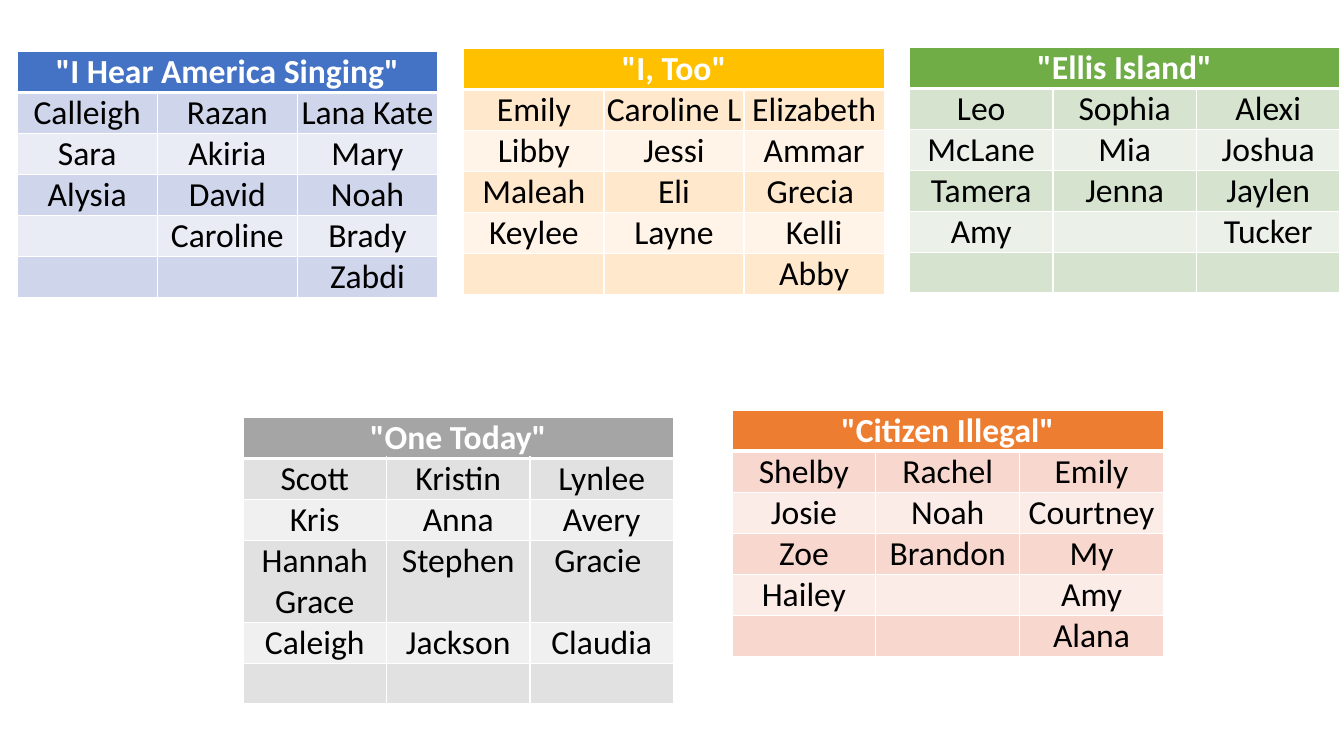
import pptx
import pptx.util
import pptx.dml.color
import pptx.enum.text
import pptx.oxml
import pptx.oxml.ns
from pptx.util import Inches

COLUMNS = 3
ROW_HEIGHT = 0.4
FONT = "Calibri"
COLORS = {
    "white": "FFFFFF", "black": "000000",
    # header, odd row, even row
    "blue": ("4472C4", "CFD5EA", "E9EBF5"),
    "gray": ("A5A5A5", "E1E1E1", "F0F0F0"),
    "orange": ("ED7D31", "F8D7CE", "FCECE8"),
    "green": ("70AD47", "D5E3CF", "EBF1E9"),
    "gold": ("FFC000", "FFE8CC", "FFF4E7"),
}

# title, theme, (left, top, width), rows of names
GROUPS = [
    ('"I Hear America Singing"', "blue", (0.17, 0.51, 4.17), [
        ("Calleigh", "Razan", "Lana Kate"),
        ("Sara", "Akiria", "Mary"),
        ("Alysia", "David", "Noah"),
        ("", "Caroline", "Brady"),
        ("", "", "Zabdi")]),
    ('"One Today"', "gray", (2.41, 4.14, 4.27), [
        ("Scott", "Kristin", "Lynlee"),
        ("Kris", "Anna", "Avery"),
        ("Hannah Grace", "Stephen", "Gracie "),
        ("Caleigh", "Jackson", "Claudia"),
        ("", "", "")]),
    ('"Citizen Illegal"', "orange", (7.26, 4.07, 4.28), [
        ("Shelby", "Rachel", "Emily"),
        ("Josie", "Noah", "Courtney"),
        ("Zoe", "Brandon", "My"),
        ("Hailey", "", "Amy"),
        ("", "", "Alana")]),
    ('"Ellis Island"', "green", (9.02, 0.47, 4.27), [
        ("Leo", "Sophia", "Alexi"),
        ("McLane", "Mia", "Joshua"),
        ("Tamera", "Jenna", "Jaylen"),
        ("Amy", "", "Tucker"),
        ("", "", "")]),
    ('"I, Too"', "gold", (4.6, 0.48, 4.17), [
        ("Emily", "Caroline L", "Elizabeth"),
        ("Libby", "Jessi", "Ammar"),
        ("Maleah", "Eli", "Grecia "),
        ("Keylee", "Layne", "Kelli"),
        ("", "", "Abby")]),
]


def rgb(value):
    return pptx.dml.color.RGBColor.from_string(value)


def set_borders(cell, top, bottom):
    """White borders; top and bottom widths in points."""
    tcPr = cell._tc.get_or_add_tcPr()
    for side, width in (("L", 1), ("R", 1), ("T", top), ("B", bottom)):
        tcPr.append(pptx.oxml.parse_xml(
            f'<a:ln{side} {pptx.oxml.ns.nsdecls("a")} w="{pptx.util.Pt(width)}">'
            f'<a:solidFill><a:srgbClr val="{COLORS["white"]}"/></a:solidFill>'
            f'</a:ln{side}>'))


def style_cell(cell, text, fill, color, bold):
    cell.margin_left = cell.margin_right = 0
    cell.margin_top = cell.margin_bottom = 0
    cell.fill.solid()
    cell.fill.fore_color.rgb = rgb(fill)
    if not text:
        return
    p = cell.text_frame.paragraphs[0]
    p.text = text
    p.alignment = pptx.enum.text.PP_ALIGN.CENTER
    font = p.runs[0].font
    font.name = FONT
    font.size = pptx.util.Pt(24)
    font.bold = bold
    font.color.rgb = rgb(color)


def add_group_table(s, title, theme, box, names):
    left, top, width = box
    rows = [(title, "", "")] + names
    table = s.shapes.add_table(
        len(rows), COLUMNS, Inches(left), Inches(top),
        Inches(width), Inches(ROW_HEIGHT * len(rows))).table
    for column in table.columns:
        column.width = Inches(width / COLUMNS)

    # Header spans all columns; body rows alternate two tints
    table.cell(0, 0).merge(table.cell(0, COLUMNS - 1))
    header, odd, even = COLORS[theme]
    for i, row in enumerate(rows):
        is_header = i == 0
        fill = header if is_header else odd if i % 2 else even
        color = COLORS["white" if is_header else "black"]
        for j, text in enumerate(row):
            cell = table.cell(i, j)
            set_borders(cell, 3 if i == 1 else 1, 3 if is_header else 1)
            style_cell(cell, text, fill, color, is_header)
            if j == 0 and text and not is_header:
                cell.vertical_anchor = pptx.enum.text.MSO_ANCHOR.MIDDLE


def main():
    prs = pptx.Presentation()
    prs.slide_width = Inches(13.33)
    prs.slide_height = Inches(7.5)
    s = prs.slides.add_slide(prs.slide_layouts[6])
    for group in GROUPS:
        add_group_table(s, *group)
    prs.save("out.pptx")


if __name__ == "__main__":
    main()
